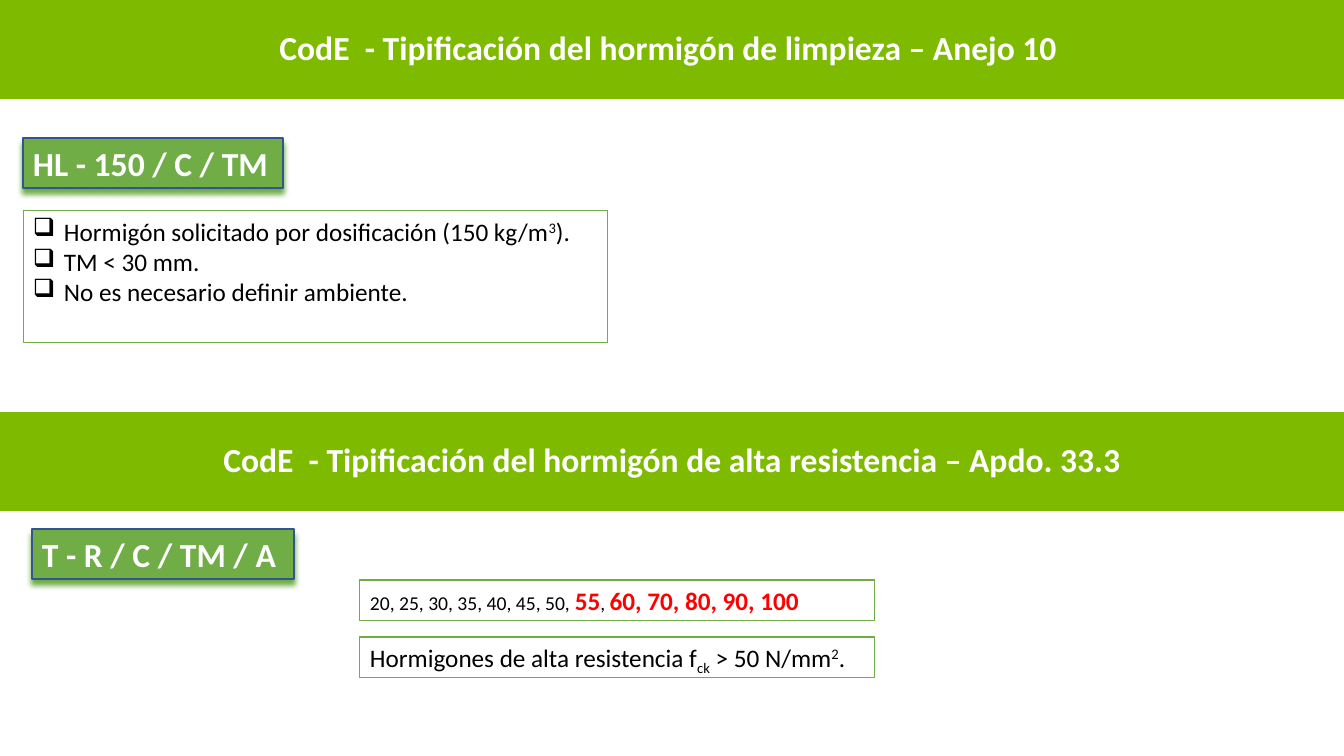
from lxml.etree import SubElement
from pptx import Presentation
from pptx.dml.color import RGBColor
from pptx.enum.shapes import MSO_SHAPE
from pptx.enum.text import MSO_ANCHOR, PP_ALIGN
from pptx.oxml.ns import qn
from pptx.util import Emu, Pt

COLORS = {
    "band": "7DBA00",
    "green": "70AD47",
    "navy": "325491",
    "white": "FFFFFF",
    "black": "000000",
    "red": "FF0000",
}
FONT = "Calibri"
SLIDE_WIDTH, SLIDE_HEIGHT = 1344, 756
BAND_HEIGHT = 99
INDENT = 31


def px(length):
    """Turn pixels into EMU."""
    return Emu(round(length * 914400 / 100.8))


def color(name):
    """Look up a named colour."""
    return RGBColor.from_string(COLORS[name])


def add_box(page, place, fill=None, line=None, line_width=0.75, anchor=MSO_ANCHOR.TOP):
    """Add a plain rectangle that holds left-aligned, wrapped text."""
    box = page.shapes.add_shape(MSO_SHAPE.RECTANGLE, *map(px, place))
    box.shadow.inherit = False
    if fill:
        box.fill.solid()
        box.fill.fore_color.rgb = color(fill)
    else:
        box.fill.background()
    if line:
        box.line.color.rgb = color(line)
        box.line.width = Pt(line_width)
    else:
        box.line.fill.background()
    box.text_frame.word_wrap = True
    box.text_frame.vertical_anchor = anchor
    box.text_frame.paragraphs[0].alignment = PP_ALIGN.LEFT
    return box


def add_span(para, text, size=18, tint="black", bold=False, baseline=0):
    """Add a formatted run, raised or lowered by a baseline percentage."""
    span = para.add_run()
    span.text = text
    span.font.name = FONT
    span.font.size = Pt(size)
    span.font.bold = bold
    span.font.color.rgb = color(tint)
    if baseline:
        span.font._element.set("baseline", str(baseline * 1000))


def add_shadow(box):
    """Add a soft green shadow below a box."""
    effects = box._element.spPr.find(qn("a:effectLst"))
    shadow = SubElement(effects, qn("a:outerShdw"), blurRad=str(Pt(4)),
                        dist=str(Pt(4)), dir="5400000", rotWithShape="0")
    SubElement(shadow, qn("a:srgbClr"), val=COLORS["green"])


def add_bullet(para):
    """Give a paragraph a hanging square bullet."""
    properties = para._p.get_or_add_pPr()
    properties.set("marL", str(px(INDENT)))
    properties.set("indent", str(-px(INDENT)))
    SubElement(properties, qn("a:buChar"), char="❑")


def add_band(page, top, text):
    """Add a full-width heading band."""
    box = add_box(page, (0, top, SLIDE_WIDTH, BAND_HEIGHT), "band", anchor=MSO_ANCHOR.MIDDLE)
    para = box.text_frame.paragraphs[0]
    para.alignment = PP_ALIGN.CENTER
    para.line_spacing = 0.9
    add_span(para, text, 24, "white", True)


def add_code_label(page, place, text):
    """Add a shadowed label with a concrete designation."""
    box = add_box(page, place, "green", "navy", 1, MSO_ANCHOR.MIDDLE)
    add_shadow(box)
    add_span(box.text_frame.paragraphs[0], text, 24, "white", True)


def add_note(page, place, lines, bulleted=False):
    """Add an outlined note with one paragraph per list of spans."""
    frame = add_box(page, place, line="green").text_frame
    for index, spans in enumerate(lines):
        para = frame.add_paragraph() if index else frame.paragraphs[0]
        para.alignment = PP_ALIGN.LEFT
        if bulleted:
            add_bullet(para)
        for text, style in spans:
            add_span(para, text, **style)


def main():
    """Build the slide on concrete designations."""
    deck = Presentation()
    deck.slide_width, deck.slide_height = px(SLIDE_WIDTH), px(SLIDE_HEIGHT)
    page = deck.slides.add_slide(deck.slide_layouts[6])
    plain, small = {}, {"size": 14}
    high = {"tint": "red", "bold": True}
    raised, lowered = {"baseline": 30}, {"baseline": -25}

    add_band(page, 0, "CodE  - Tipificación del hormigón de limpieza – Anejo 10 ")
    add_code_label(page, (23, 138, 260, 50), "HL - 150 / C / TM")
    add_note(page, (23, 211, 585, 132), [
        [("Hormigón solicitado por dosificación (150 kg/m", plain), ("3", raised), (").", plain)],
        [("TM < 30 mm.", plain)],
        [("No es necesario definir ambiente.", plain)],
    ], bulleted=True)

    add_band(page, 412, "CodE  - Tipificación del hormigón de alta resistencia – Apdo. 33.3")
    add_note(page, (360, 580, 515, 41), [
        [("20, 25, 30, 35, 40, 45, 50, ", small), ("55", high), (", ", small),
         ("60, 70, 80, 90, 100", high)],
    ])
    add_note(page, (360, 637, 515, 41), [
        [("Hormigones de alta resistencia f", plain), ("ck", lowered),
         (" > 50 N/mm", plain), ("2", raised), (".", plain)],
    ])
    add_code_label(page, (32, 529, 262, 50), "T - R / C / TM / A")
    deck.save("out.pptx")


if __name__ == "__main__":
    main()
